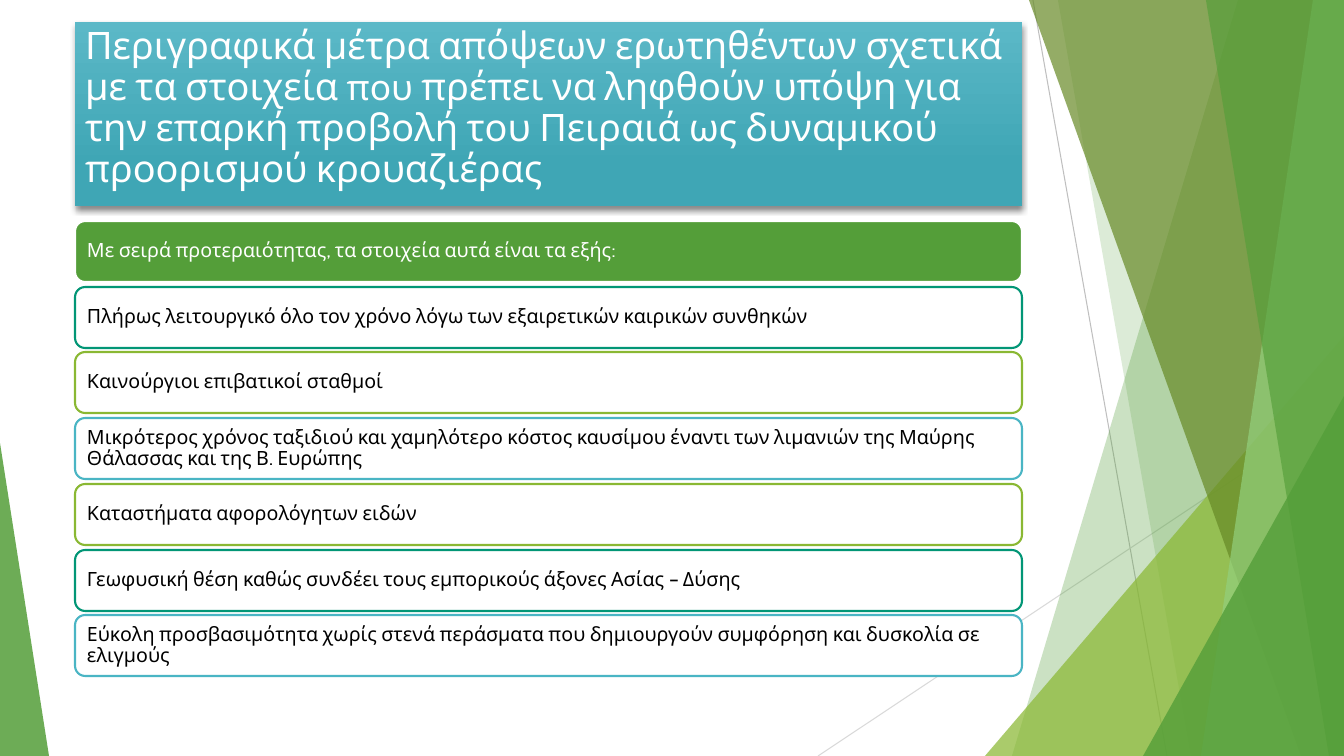
from lxml import etree
from pptx import Presentation
from pptx import util as u
from pptx.dml.color import RGBColor
from pptx.enum import shapes, text
from pptx.oxml.ns import qn

COLORS = {
    "white": "FFFFFF", "black": "000000", "green": "549E39", "lime": "8AB833",
    "olive": "678A26", "mint": "93D07D", "teal": "029676", "aqua": "4AB5C4",
    "title_top": "5BB8C7", "title_bottom": "3FA6B5",
    "grey": "BFBFBF", "pale_grey": "D9D9D9",
}
FONT = "Cabin"
WIDTH, HEIGHT = 1344, 756
LEFT, CONTENT_WIDTH = 75, 947
ROW_TOP, ROW_PITCH, ROW_HEIGHT = 221, 65.7, 61


def px(n):
    return u.Emu(round(n * 9144000 / 1008))


def rgb(name):
    return RGBColor.from_string(COLORS[name])


class SlideBuilder:
    def __init__(self, prs):
        self.s = prs.slides.add_slide(prs.slide_layouts[5])

    def fill(self, sp, color, opacity=100):
        sp.shadow.inherit = False
        sp.fill.solid()
        sp.fill.fore_color.rgb = rgb(color)
        if opacity < 100:
            clr = sp._element.spPr.find(f"{qn('a:solidFill')}/{qn('a:srgbClr')}")
            etree.SubElement(clr, qn("a:alpha"), val=str(opacity * 1000))

    def line(self, x1, y1, x2, y2, color):
        c = self.s.shapes.add_connector(
            shapes.MSO_CONNECTOR.STRAIGHT, px(x1), px(y1), px(x2), px(y2))
        c.line.color.rgb = rgb(color)
        c.line.width = u.Pt(0.75)
        etree.SubElement(c._element.spPr, qn("a:effectLst"))

    def band(self, top_x, bottom_x, color, opacity):
        """Slanted left edge, running to the right edge of the slide."""
        builder = self.s.shapes.build_freeform(top_x, 0, scale=px(1))
        builder.add_line_segments(
            [(WIDTH, 0), (WIDTH, HEIGHT), (bottom_x, HEIGHT)], close=True)
        sp = builder.convert_to_shape()
        self.fill(sp, color, opacity)
        sp.line.fill.background()

    def triangle(self, x, y, w, apex, color, opacity):
        """Triangle standing on the bottom edge of the slide."""
        sp = self.s.shapes.add_shape(
            shapes.MSO_SHAPE.ISOSCELES_TRIANGLE, px(x), px(y), px(w), px(HEIGHT - y))
        sp.adjustments[0] = apex
        self.fill(sp, color, opacity)
        sp.line.fill.background()

    def put_text(self, tf, runs, color, **frame):
        settings = {"word_wrap": True, "auto_size": text.MSO_AUTO_SIZE.NONE, **frame}
        for name, value in settings.items():
            setattr(tf, name, value)
        p = tf.paragraphs[0]
        p.alignment = text.PP_ALIGN.LEFT
        p.line_spacing = 0.9
        for words, size in runs:
            r = p.add_run()
            r.text = words
            for name, value in {"name": FONT, "size": u.Pt(size)}.items():
                setattr(r.font, name, value)
            r.font.color.rgb = rgb(color)

    def title(self, y, h, runs):
        sp = self.s.shapes.title
        box = {"left": LEFT, "top": y, "width": CONTENT_WIDTH, "height": h}
        for name, value in box.items():
            setattr(sp, name, px(value))
        sp.fill.gradient()
        sp.fill.gradient_angle = 270
        stops = (("title_top", 0), ("title_bottom", 0.78))
        for stop, (color, position) in zip(sp.fill.gradient_stops, stops):
            stop.color.rgb = rgb(color)
            stop.position = position
        effects = etree.SubElement(sp._element.spPr, qn("a:effectLst"))
        shadow = etree.SubElement(
            effects, qn("a:outerShdw"), blurRad="50800", dist="38100",
            dir="5400000", rotWithShape="0")
        clr = etree.SubElement(shadow, qn("a:srgbClr"), val=COLORS["black"])
        etree.SubElement(clr, qn("a:alpha"), val="46000")
        self.put_text(sp.text_frame, runs, "white",
                      vertical_anchor=text.MSO_ANCHOR.TOP)

    def row(self, y, words, fill, outline, color):
        sp = self.s.shapes.add_shape(
            shapes.MSO_SHAPE.ROUNDED_RECTANGLE,
            px(LEFT), px(y), px(CONTENT_WIDTH), px(ROW_HEIGHT))
        self.fill(sp, fill)
        sp.line.color.rgb = rgb(outline)
        sp.line.width = u.Pt(1.5)
        self.put_text(sp.text_frame, [(words, 14)], color,
                      vertical_anchor=text.MSO_ANCHOR.MIDDLE,
                      margin_left=px(9), margin_right=px(9),
                      margin_top=px(6), margin_bottom=px(6))


TITLE = [
    ("Περιγραφικά μέτρα απόψεων ερωτηθέντων σχετικά με τα στοιχεία ", 27),
    ("που", 25.2),
    (" πρέπει να ληφθούν υπόψη για την επαρκή προβολή του Πειραιά "
     "ως δυναμικού προορισμού κρουαζιέρας", 27),
]
ROWS = [
    ("Με σειρά προτεραιότητας, τα στοιχεία αυτά είναι τα εξής:",
     "green", "white", "white"),
    ("Πλήρως λειτουργικό όλο τον χρόνο λόγω των εξαιρετικών καιρικών συνθηκών",
     "white", "teal", "black"),
    ("Καινούργιοι επιβατικοί σταθμοί", "white", "lime", "black"),
    ("Μικρότερος χρόνος ταξιδιού και χαμηλότερο κόστος καυσίμου έναντι των "
     "λιμανιών της Μαύρης Θάλασσας και της Β. Ευρώπης", "white", "aqua", "black"),
    ("Καταστήματα αφορολόγητων ειδών", "white", "lime", "black"),
    ("Γεωφυσική θέση καθώς συνδέει τους εμπορικούς άξονες Ασίας – Δύσης",
     "white", "teal", "black"),
    ("Εύκολη προσβασιμότητα χωρίς στενά περάσματα που δημιουργούν συμφόρηση "
     "και δυσκολία σε ελιγμούς", "white", "aqua", "black"),
]


def main():
    prs = Presentation()
    prs.slide_width, prs.slide_height = px(WIDTH), px(HEIGHT)
    slide = SlideBuilder(prs)

    # Background facets, back to front
    slide.line(1033, 0, 1167, HEIGHT, "grey")
    slide.line(WIDTH, 406, 818, HEIGHT, "pale_grey")
    slide.band(1238, 1012, "green", 30)
    slide.band(1058, 1191, "green", 20)
    slide.triangle(985, 336, 359, 1, "lime", 72)
    slide.band(1029, 1301, "olive", 70)
    slide.band(1313, 1201, "mint", 70)
    slide.band(1206, 1329, "green", 65)
    slide.triangle(1143, 396, 201, 1, "green", 80)
    slide.triangle(0, 443, 49, 0, "green", 85)

    # Title
    slide.title(22, 184, TITLE)

    # Priority list
    for i, row in enumerate(ROWS):
        slide.row(round(ROW_TOP + i * ROW_PITCH), *row)

    prs.save("out.pptx")


if __name__ == "__main__":
    main()
